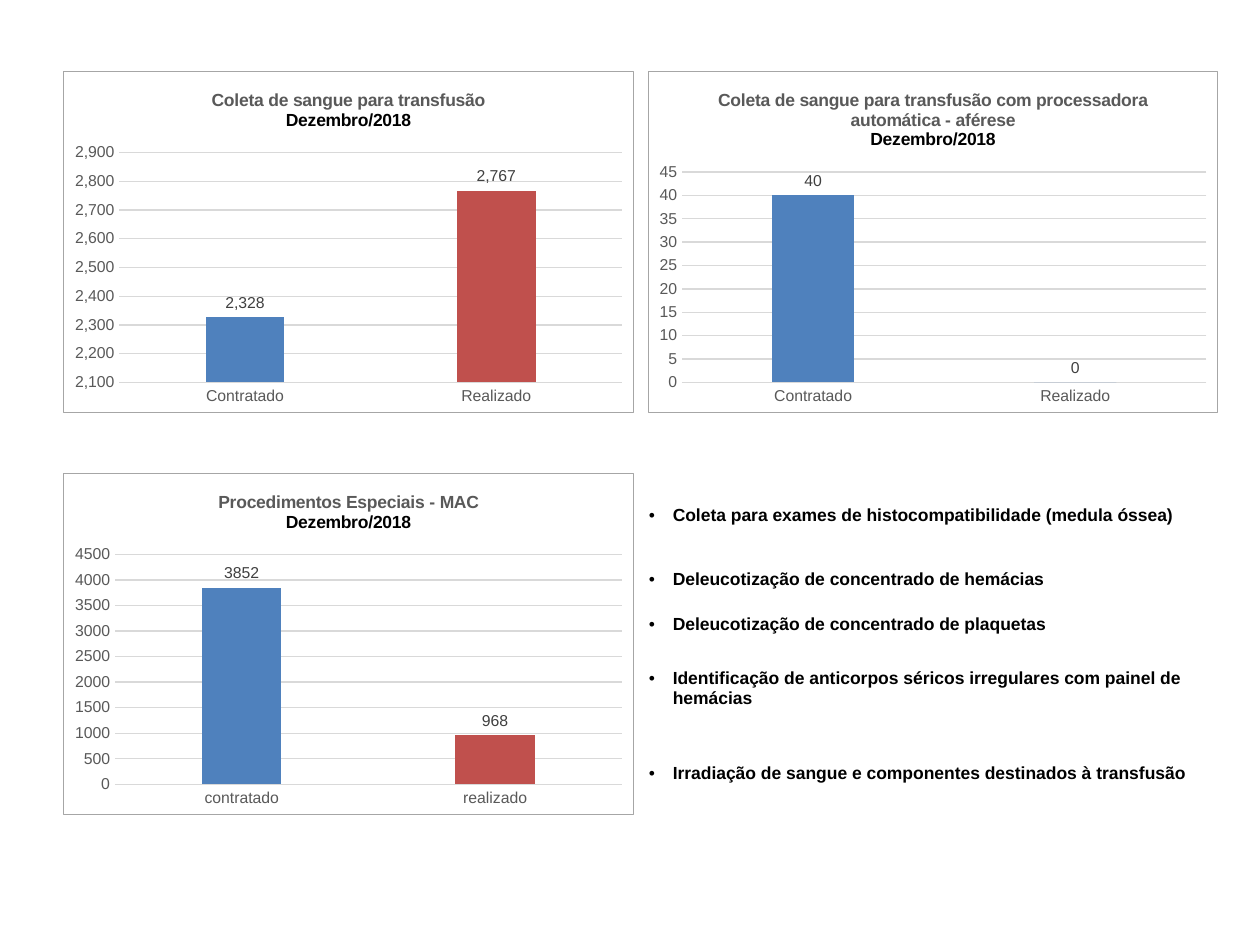
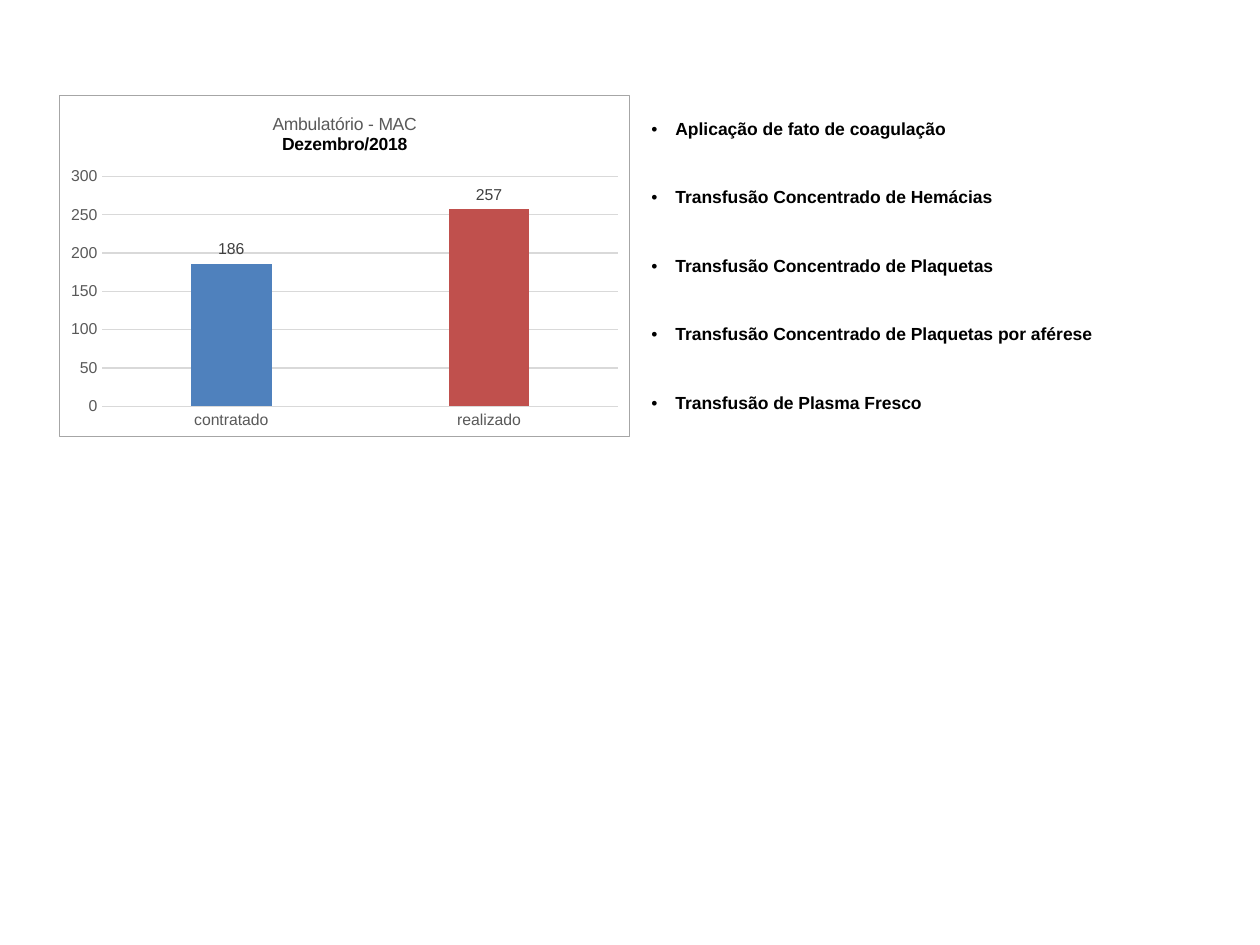
from lxml import etree
from pptx import Presentation
from pptx import util as u
from pptx.chart import data as chart_data
from pptx.dml.color import RGBColor
from pptx.enum import chart as kinds, text
from pptx.oxml import parse_xml
from pptx.oxml import ns

Pt = u.Pt
BLUE = RGBColor(0x4F, 0x81, 0xBD)
RED = RGBColor(0xC0, 0x50, 0x4D)
BLACK = RGBColor(0, 0, 0)
LABEL_GREY = RGBColor(0x40, 0x40, 0x40)
AXIS_GREY = RGBColor(0x59, 0x59, 0x59)
BORDER_GREY = RGBColor(0xA6, 0xA6, 0xA6)
GRID_GREY = RGBColor(0xD9, 0xD9, 0xD9)
WHITE = RGBColor(0xFF, 0xFF, 0xFF)
FONT = "Arial"
MONTH = "Dezembro/2018"
PANEL_WIDTH, PANEL_HEIGHT = 326.2, 195.8
INDENT = 13.7

SPECIAL_PROCEDURES = [
    ("Coleta para exames de histocompatibilidade (medula óssea)", 48.4),
    ("Deleucotização de concentrado de hemácias", 25.2),
    ("Deleucotização de concentrado de plaquetas", 25.2),
    ("Identificação de anticorpos séricos irregulares com painel de hemácias", 48.4),
    ("Irradiação de sangue e componentes destinados à transfusão", 48.4),
]
OUTPATIENT_PROCEDURES = [(name, PANEL_HEIGHT / 5) for name in (
    "Aplicação de fato de coagulação",
    "Transfusão Concentrado de Hemácias",
    "Transfusão Concentrado de Plaquetas",
    "Transfusão Concentrado de Plaquetas por aférese",
    "Transfusão de Plasma Fresco",
)]


def set_font(font, size, color, bold=False):
    font.name, font.size, font.bold = FONT, Pt(size), bold
    font.color.rgb = color


def set_line(line, color):
    line.color.rgb = color
    line.width = Pt(0.75)


def frame_chart(chart):
    frame = parse_xml(
        f'<c:spPr {ns.nsdecls("c", "a")}><a:solidFill><a:srgbClr val="{WHITE}"/></a:solidFill>'
        f'<a:ln w="{Pt(0.75)}"><a:solidFill><a:srgbClr val="{BORDER_GREY}"/></a:solidFill></a:ln></c:spPr>')
    chart.element.find(ns.qn("c:chart")).addnext(frame)


def title_chart(chart, title, bold):
    frame = chart.chart_title.text_frame
    frame.text = f"{title}\n{MONTH}"
    heading, month = frame.paragraphs
    set_font(heading.runs[0].font, 10, AXIS_GREY, bold)
    set_font(month.runs[0].font, 10, BLACK, True)


def style_axes(chart, scale, number_format):
    for axis in (chart.category_axis, chart.value_axis):
        axis.major_tick_mark = axis.minor_tick_mark = kinds.XL_TICK_MARK.NONE
        set_font(axis.tick_labels.font, 9, AXIS_GREY)
    set_line(chart.category_axis.format.line, GRID_GREY)
    values = chart.value_axis
    values.minimum_scale, values.maximum_scale, values.major_unit = scale
    values.format.line.fill.background()
    set_line(values.major_gridlines.format.line, GRID_GREY)
    values.tick_labels.number_format = number_format
    values.tick_labels.number_format_is_linked = False


def add_comparison(page, left, top, title, categories, values, scale,
                   number_format="General", bold=True, last_color=RED):
    numbers = chart_data.CategoryChartData()
    numbers.categories = categories
    numbers.add_series("Series 1", values)
    chart = page.shapes.add_chart(
        kinds.XL_CHART_TYPE.COLUMN_CLUSTERED, Pt(left), Pt(top),
        Pt(PANEL_WIDTH), Pt(PANEL_HEIGHT), numbers).chart
    set_font(chart.font, 10, BLACK)
    chart.has_legend = False
    frame_chart(chart)
    title_chart(chart, title, bold)
    style_axes(chart, scale, number_format)
    plot = chart.plots[0]
    plot.gap_width, plot.overlap = 219, -27
    plot.vary_by_categories = False
    series = plot.series[0]
    for target, color in ((series, BLUE), (series.points[1], last_color)):
        target.format.fill.solid()
        target.format.fill.fore_color.rgb = color
    labels = series.data_labels
    labels.show_value = True
    labels.position = kinds.XL_LABEL_POSITION.OUTSIDE_END
    labels.number_format = number_format
    labels.number_format_is_linked = False
    set_font(labels.font, 9, LABEL_GREY)


def border_cell(cell):
    properties = cell._tc.get_or_add_tcPr()
    for side in ("lnL", "lnR", "lnT", "lnB"):
        line = etree.SubElement(properties, ns.qn(f"a:{side}"), w=str(Pt(1)))
        fill = etree.SubElement(line, ns.qn("a:solidFill"))
        etree.SubElement(fill, ns.qn("a:srgbClr"), val=str(WHITE))


def fill_cell(cell, name):
    border_cell(cell)
    cell.fill.background()
    cell.vertical_anchor = text.MSO_ANCHOR.MIDDLE
    cell.margin_left = cell.margin_right = cell.margin_top = Pt(0.75)
    cell.margin_bottom = 0
    para = cell.text_frame.paragraphs[0]
    para.text = name
    properties = para._p.get_or_add_pPr()
    properties.set("marL", str(Pt(INDENT)))
    properties.set("indent", str(-Pt(INDENT)))
    etree.SubElement(properties, ns.qn("a:buFont"), typeface=FONT)
    etree.SubElement(properties, ns.qn("a:buChar"), char="•")
    set_font(para.runs[0].font, 10, BLACK, True)


def add_procedures(page, left, top, width, procedures):
    table = page.shapes.add_table(
        len(procedures), 1, Pt(left), Pt(top), Pt(width), Pt(PANEL_HEIGHT)).table
    table.first_row = table.horz_banding = False
    table.columns[0].width = Pt(width)
    for row, (name, height) in zip(table.rows, procedures):
        row.height = Pt(height)
        fill_cell(row.cells[0], name)


def build_collection_page(page):
    left, right, upper, lower = 36, 370, 40.3, 270
    capitalised = ("Contratado", "Realizado")
    add_comparison(page, left, upper, "Coleta de sangue para transfusão",
                   capitalised, (2328, 2767), (2100, 2900, 100), "#,##0")
    add_comparison(page, right, upper,
                   "Coleta de sangue para transfusão com processadora automática - aférese",
                   capitalised, (40, 0), (0, 45, 5), last_color=BLUE)
    add_comparison(page, left, lower, "Procedimentos Especiais - MAC",
                   ("contratado", "realizado"), (3852, 968), (0, 4500, 500))
    add_procedures(page, right, lower, PANEL_WIDTH, SPECIAL_PROCEDURES)


def build_outpatient_page(page):
    top = 54
    add_comparison(page, 33.8, top, "Ambulatório - MAC",
                   ("contratado", "realizado"), (186, 257), (0, 300, 50), bold=False)
    add_procedures(page, 371.5, top, 254.2, OUTPATIENT_PROCEDURES)


def main():
    deck = Presentation()
    deck.slide_width, deck.slide_height = Pt(720), Pt(540)
    blank = deck.slide_layouts[6]
    for build in (build_collection_page, build_outpatient_page):
        build(deck.slides.add_slide(blank))
    deck.save("out.pptx")


if __name__ == "__main__":
    main()
